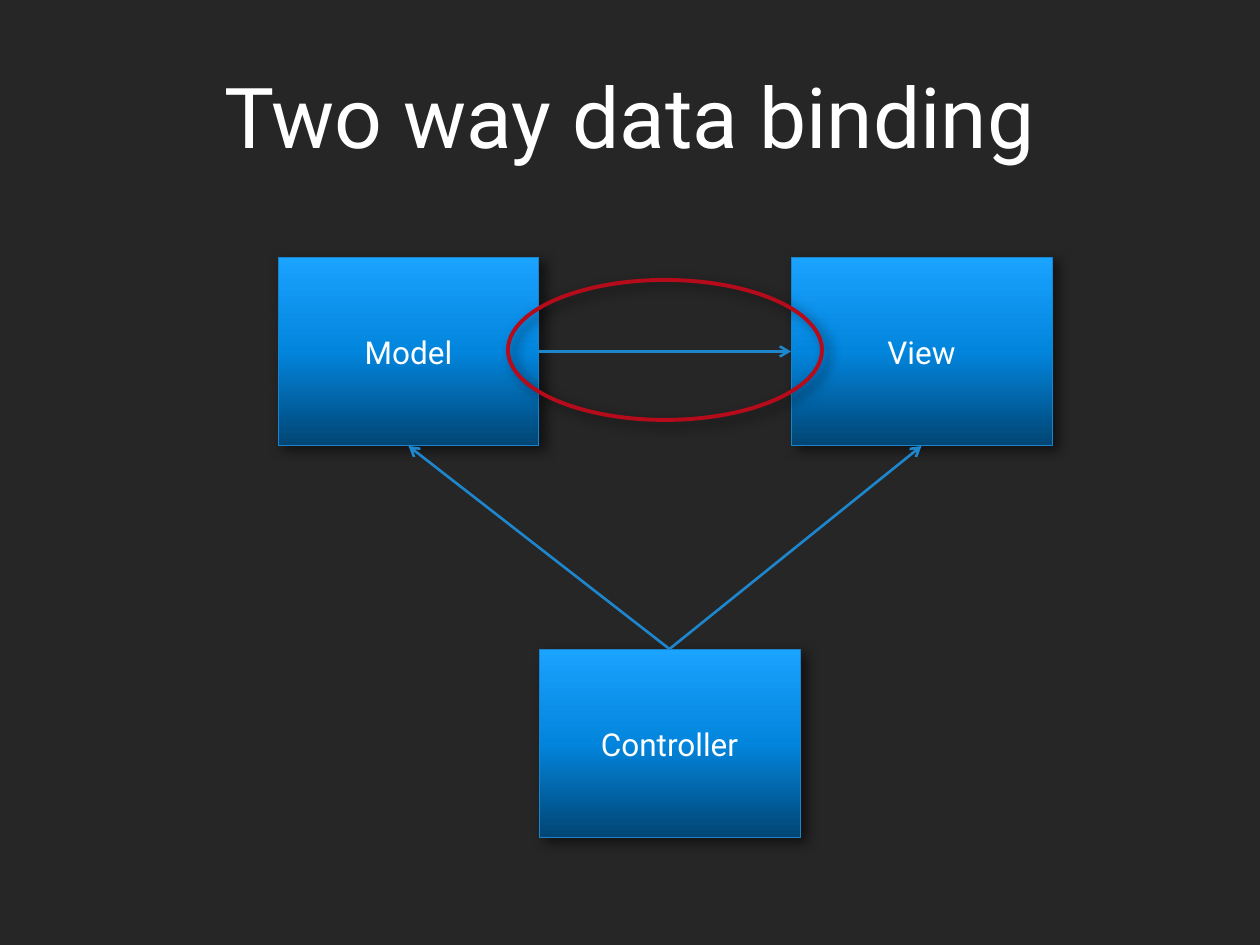
import copy

import pptx
import pptx.util
import pptx.dml.color
import pptx.enum.shapes
import pptx.enum.text
import pptx.oxml.ns
from lxml import etree

PX = 914400 / 126
TOP, LEFT, BOTTOM, RIGHT = range(4)
SHAPE = pptx.enum.shapes.MSO_SHAPE


def emu(px):
    return pptx.util.Emu(round(px * PX))


def color(code):
    return pptx.dml.color.RGBColor.from_string(code)


def child(parent, tag, **attrs):
    return etree.SubElement(parent, pptx.oxml.ns.qn(tag), **attrs)


def write(shape, text, size=18, ink="FFFFFF", font="Roboto"):
    frame = shape.text_frame
    frame.word_wrap = True
    frame.vertical_anchor = pptx.enum.text.MSO_ANCHOR.MIDDLE
    para = frame.paragraphs[0]
    para.alignment = pptx.enum.text.PP_ALIGN.CENTER
    run = para.add_run()
    run.text = text
    run.font.size = pptx.util.Pt(size)
    run.font.name = font
    run.font.color.rgb = color(ink)


class Board:
    stops = [(0, "014573"), (0.5, "0285DD"), (1, "1AA3FF")]
    edge, wire, ring = "1884CD", "1D86CD", "B50B1B"

    def __init__(self, slide, back):
        self.slide = slide
        slide.background.fill.solid()
        slide.background.fill.fore_color.rgb = color(back)

    def title(self, text, *place):
        box = self.slide.shapes.add_textbox(*map(emu, place))
        write(box, text, size=48)

    def stroke(self, line, ink, width):
        line.color.rgb = color(ink)
        line.width = pptx.util.Pt(width)

    def shade(self, shape):
        shape.shadow.inherit = False
        effects = shape._element.spPr.find(pptx.oxml.ns.qn("a:effectLst"))
        outer = child(effects, "a:outerShdw", blurRad="88900", dist="50800",
                      dir="2100000", algn="ctr", rotWithShape="0")
        black = child(outer, "a:srgbClr", val="000000")
        child(black, "a:alpha", val="55000")

    def blend(self, shape):
        fill = shape.fill
        fill.gradient()
        fill.gradient_angle = 90
        first = shape._element.spPr.find(".//" + pptx.oxml.ns.qn("a:gs"))
        first.addnext(copy.deepcopy(first))
        for stop, (spot, code) in zip(fill.gradient_stops, self.stops):
            stop.position = spot
            stop.color.rgb = color(code)

    def box(self, text, x, y, w=261, h=189):
        shape = self.slide.shapes.add_shape(
            SHAPE.RECTANGLE, *map(emu, (x, y, w, h)))
        self.blend(shape)
        self.stroke(shape.line, self.edge, 0.5)
        self.shade(shape)
        write(shape, text)
        return shape

    def arrow(self, start, side, end, face):
        link = self.slide.shapes.add_connector(
            pptx.enum.shapes.MSO_CONNECTOR.STRAIGHT, 0, 0, 0, 0)
        link.begin_connect(start, side)
        link.end_connect(end, face)
        self.stroke(link.line, self.wire, 1.5)
        child(link.line._get_or_add_ln(), "a:tailEnd", type="arrow")
        child(link._element.spPr, "a:effectLst")

    def oval(self, *place):
        shape = self.slide.shapes.add_shape(SHAPE.OVAL, *map(emu, place))
        shape.fill.background()
        self.stroke(shape.line, self.ring, 2.25)
        self.shade(shape)


def main():
    deck = pptx.Presentation()
    deck.slide_width, deck.slide_height = emu(1260), emu(945)
    board = Board(deck.slides.add_slide(deck.slide_layouts[6]), "262626")

    # Title
    board.title("Two way data binding", 94, 16, 1071, 197)

    # Parts of the pattern
    model = board.box("Model", 278, 257)
    view = board.box("View", 791, 257)
    control = board.box("Controller", 539, 649)

    # Data flow
    board.arrow(model, RIGHT, view, LEFT)
    board.arrow(control, TOP, model, BOTTOM)
    board.arrow(control, TOP, view, BOTTOM)

    # Ring around the binding
    board.oval(508, 280, 314, 140)

    deck.save("out.pptx")


if __name__ == "__main__":
    main()
